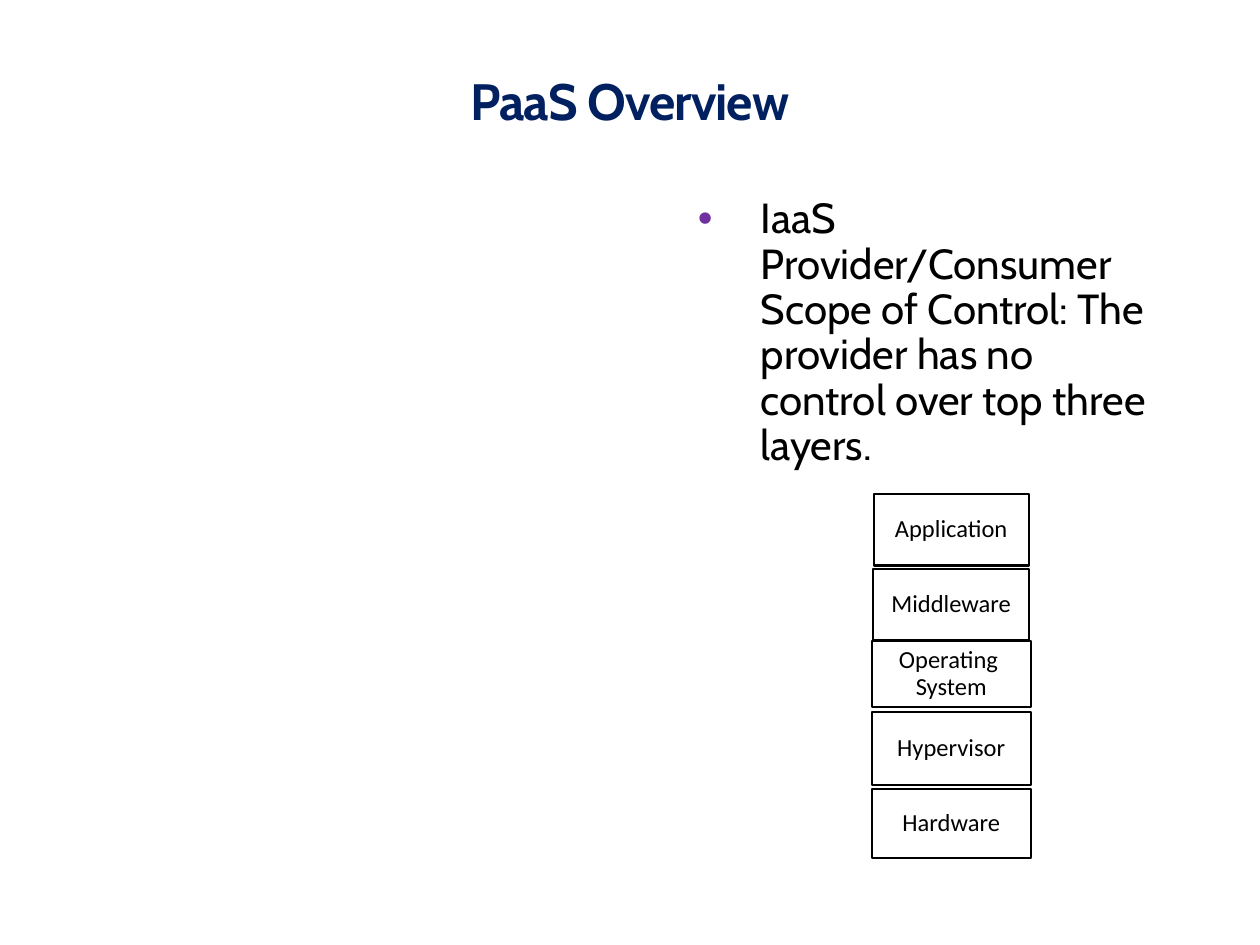
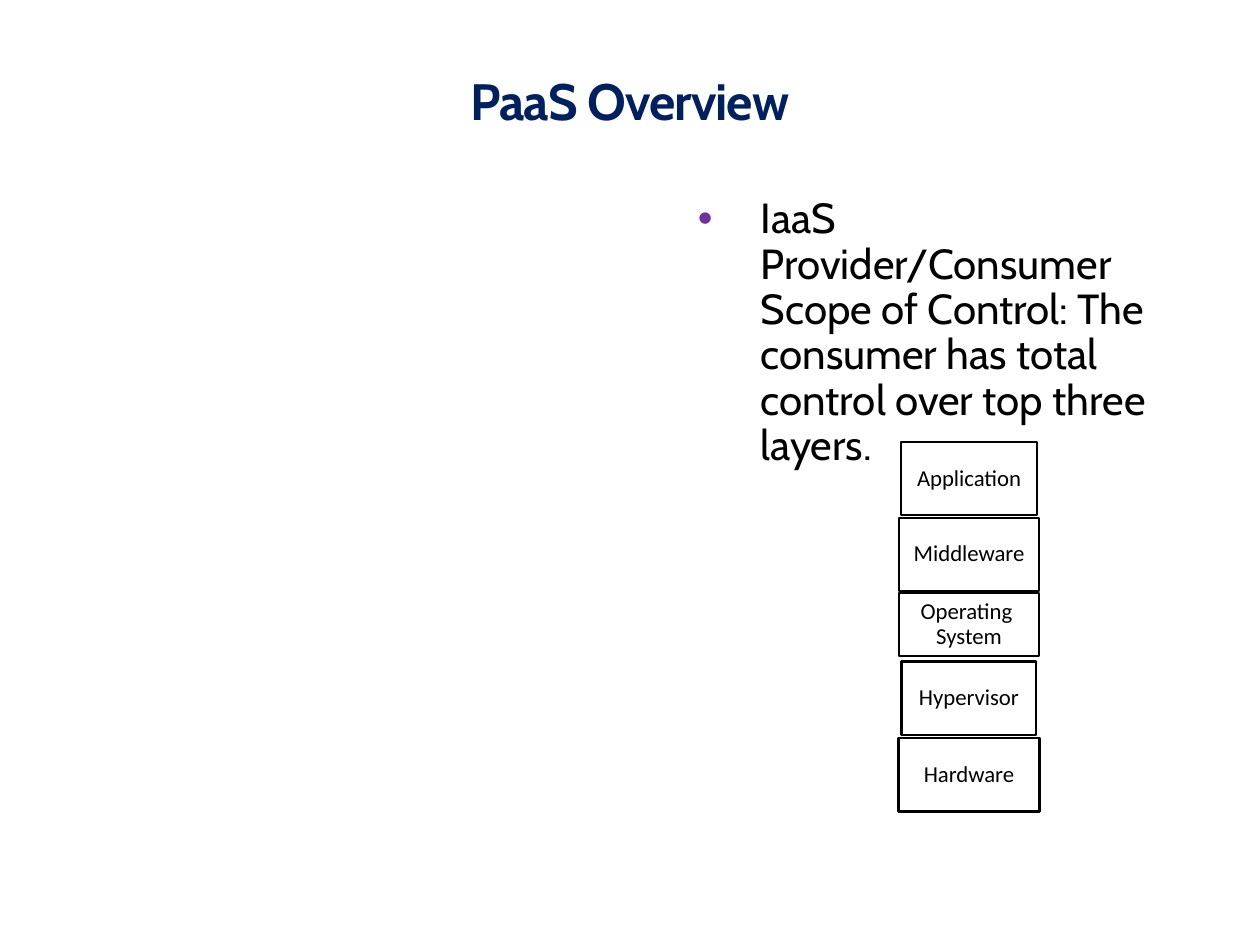
from lxml import etree
from pptx import Presentation
from pptx.dml.color import RGBColor
from pptx.enum.shapes import MSO_SHAPE as Shape
from pptx.enum.text import MSO_ANCHOR as Anchor, PP_ALIGN as Align
from pptx.oxml.ns import qn
from pptx.util import Pt

BLACK, WHITE, NAVY, PURPLE = "000000", "FFFFFF", "002060", "7030A0"
HEADING_FONT, LAYER_FONT = "Cabin", "Calibri"

# Boxes are left, top, width, height
TITLE_BOX = (0, 24.5, 720, 54)
SCOPE_BOX = (372.2, 109.4, 293.8, 303.8)

LAYERS = ["Application", "Middleware", "Operating \vSystem", "Hypervisor", "Hardware"]

# Each layer is top (from the top of the stack), width, height
SLIDES = [
    dict(
        scope="The provider has no control over top three layers.",
        stack_box=(498.2, 282.2, 90.8, 208.1),
        layer_sizes=[(0, 88.6, 41), (43.2, 89.3, 40.3), (84.2, 90.8, 37.4),
                     (124.6, 90.8, 41.8), (168.5, 90.8, 39.6)],
        layer_font_size=14,
    ),
    dict(
        scope="The consumer has total control over top three layers.",
        stack_box=(513.4, 252.7, 80.6, 211),
        layer_sizes=[(0, 77.8, 41.8), (43.2, 79.9, 41.8), (86.4, 79.9, 36),
                     (125.3, 77, 41.8), (169.2, 80.6, 41.8)],
        layer_font_size=13,
    ),
]


def color(hex_value):
    return RGBColor.from_string(hex_value)


def to_points(box):
    return [Pt(length) for length in box]


def write(shape, text, font_name, size, hex_color, line_spacing, margins, align=None, anchor=None):
    """Fill a shape with one styled paragraph and return the paragraph."""
    frame = shape.text_frame
    frame.text = text
    frame.word_wrap = True
    frame.vertical_anchor = anchor
    frame.margin_left = frame.margin_right = Pt(margins[0])
    frame.margin_top = frame.margin_bottom = Pt(margins[1])
    paragraph = frame.paragraphs[0]
    paragraph.alignment = align
    paragraph.line_spacing = line_spacing
    for run in paragraph.runs:
        run.font.name = font_name
        run.font.size = Pt(size)
        run.font.color.rgb = color(hex_color)
    return paragraph


def add_bullet(paragraph, hex_color, left, hanging):
    properties = paragraph._p.get_or_add_pPr()
    properties.set("marL", str(Pt(left)))
    properties.set("indent", str(-Pt(hanging)))
    bullet_color = etree.SubElement(properties, qn("a:buClr"))
    etree.SubElement(bullet_color, qn("a:srgbClr"), val=hex_color)
    etree.SubElement(properties, qn("a:buFont"), typeface="Arial")
    etree.SubElement(properties, qn("a:buChar"), char="•")


def add_title(slide, box):
    title = slide.shapes.add_textbox(*to_points(box))
    paragraph = write(title, "PaaS Overview", HEADING_FONT, 29.2, NAVY, 0.85,
                      (7.2, 3.6), Align.CENTER, Anchor.BOTTOM)
    font = paragraph.runs[0].font
    font.bold = True
    font._element.set("spc", "-50")


def add_scope(slide, box, scope):
    statement = slide.shapes.add_textbox(*to_points(box))
    paragraph = write(statement, f"IaaS Provider/Consumer Scope of Control: {scope}",
                      HEADING_FONT, 24, BLACK, 0.9, (0, 3.6), anchor=Anchor.TOP)
    paragraph.level = 2
    paragraph.space_after = Pt(4)
    add_bullet(paragraph, PURPLE, left=62.6, hanging=36)


def add_layer_stack(slide, box, sizes, font_size):
    """Draw the layers from top to bottom, each centred across the box."""
    left, top, stack_width, _ = box
    for name, (offset, width, height) in zip(LAYERS, sizes):
        layer_box = (left + (stack_width - width) / 2, top + offset, width, height)
        layer = slide.shapes.add_shape(Shape.RECTANGLE, *to_points(layer_box))
        layer.shadow.inherit = False
        layer.fill.solid()
        layer.fill.fore_color.rgb = color(WHITE)
        layer.line.color.rgb = color(BLACK)
        layer.line.width = Pt(1.25)
        write(layer, name, LAYER_FONT, font_size, BLACK, 0.9, (2.9, 2.9),
              Align.CENTER, Anchor.MIDDLE)


def add_overview_slide(deck, scope, stack_box, layer_sizes, layer_font_size):
    slide = deck.slides.add_slide(deck.slide_layouts[6])
    add_scope(slide, SCOPE_BOX, scope)
    add_title(slide, TITLE_BOX)
    add_layer_stack(slide, stack_box, layer_sizes, layer_font_size)


def main():
    deck = Presentation()
    deck.slide_width, deck.slide_height = Pt(720), Pt(540)
    for content in SLIDES:
        add_overview_slide(deck, **content)
    deck.save("out.pptx")


if __name__ == "__main__":
    main()
